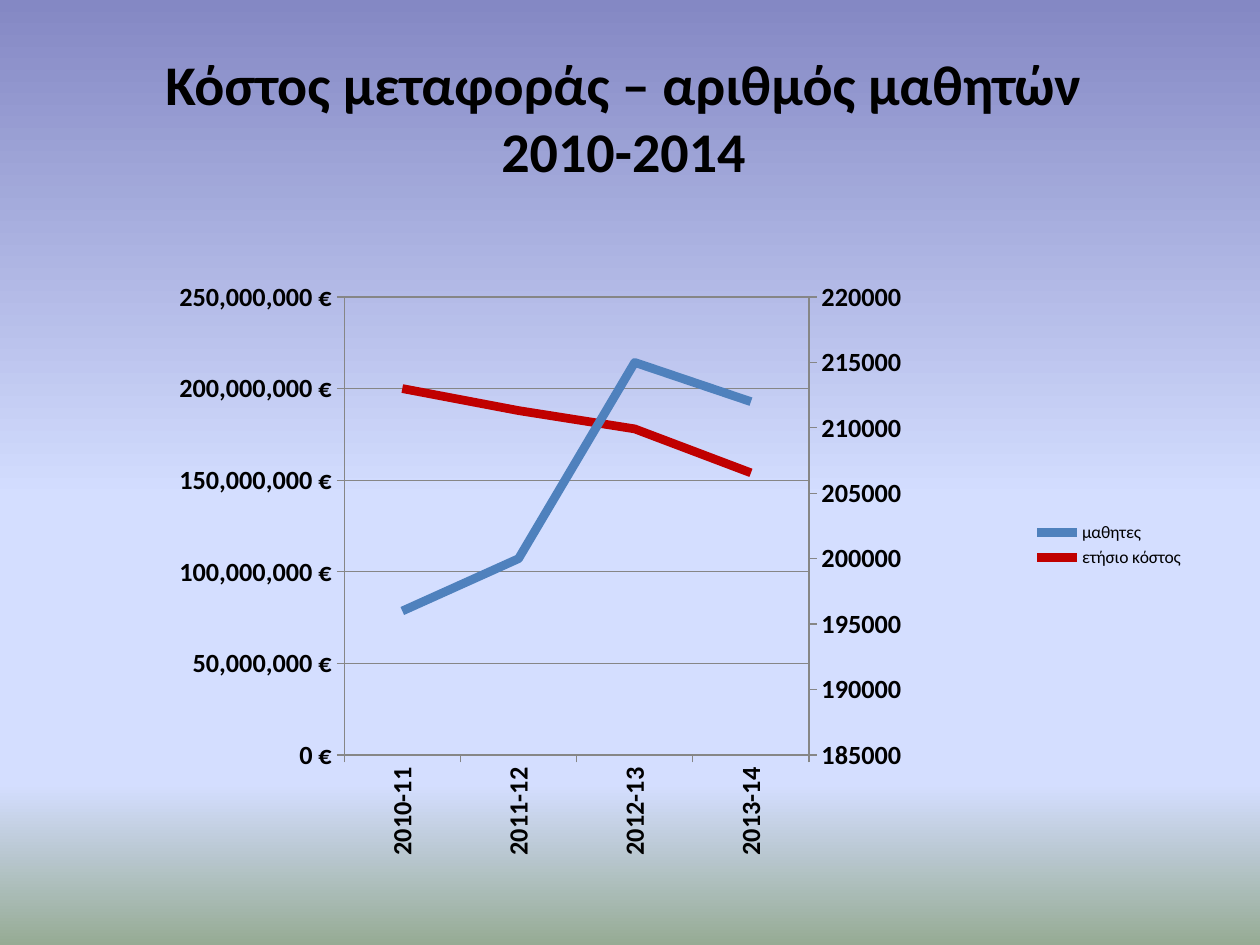
import copy
from lxml import etree
from pptx import Presentation, util as u
from pptx.chart.data import CategoryChartData
from pptx.dml.color import RGBColor
from pptx.enum import chart as ch, text
from pptx.oxml import parse_xml
from pptx.oxml.ns import qn

TITLE = ["Κόστος μεταφοράς – αριθμός μαθητών ", "2010-2014 "]
YEARS = ["2010-11", "2011-12", "2012-13", "2013-14"]
COST = ("ετήσιο κόστος", [200000000, 188000000, 178000000, 154000000])
PUPILS = ("μαθητες", [196000, 200000, 215000, 212000])
PLOT = {"x": 0.248, "y": 0.118, "w": 0.41, "h": 0.706}
THEME = {
    "font": "Calibri", "text": "000000", "grid": "868686",
    "cost": "C00000", "pupils": "4F81BD",
    "title": 32, "axis": 15, "legend": 10, "line": 5, "hair": 0.75,
    "background": [(0, "8488C4"), (53, "D4DEFF"), (83, "D4DEFF"), (100, "96AB94")],
}
NS = ('xmlns:a="http://schemas.openxmlformats.org/drawingml/2006/main" '
      'xmlns:p="http://schemas.openxmlformats.org/presentationml/2006/main" '
      'xmlns:c="http://schemas.openxmlformats.org/drawingml/2006/chart"')


def rgb(name):
    return RGBColor.from_string(THEME[name])


def style_font(font, size, bold):
    font.name, font.size, font.bold = THEME["font"], u.Pt(THEME[size]), bold
    font.color.rgb = rgb("text")


def style_line(line, color, width):
    line.color.rgb, line.width = rgb(color), u.Pt(THEME[width])


def set_background(s):
    stops = "".join(f'<a:gs pos="{pos * 1000}"><a:srgbClr val="{color}"/></a:gs>'
                    for pos, color in THEME["background"])
    s.element.cSld.insert(0, parse_xml(
        f'<p:bg {NS}><p:bgPr><a:gradFill rotWithShape="1"><a:gsLst>{stops}</a:gsLst>'
        '<a:lin ang="5400000" scaled="0"/></a:gradFill><a:effectLst/></p:bgPr></p:bg>'))


def add_title(s):
    sp = s.shapes.title
    sp.left, sp.top, sp.width, sp.height = map(u.Inches, (0.5, 0.3, 9, 1.25))
    tf = sp.text_frame
    tf.word_wrap = True
    tf.vertical_anchor = text.MSO_ANCHOR.MIDDLE
    p = tf.paragraphs[0]
    p.alignment = text.PP_ALIGN.CENTER
    for i, line in enumerate(TITLE):
        if i:
            p.add_line_break()
        r = p.add_run()
        r.text = line
        style_font(r.font, "title", True)


def style_axis(axis):
    axis.major_tick_mark = ch.XL_TICK_MARK.OUTSIDE
    axis.minor_tick_mark = ch.XL_TICK_MARK.NONE
    style_font(axis.tick_labels.font, "axis", True)
    style_line(axis.format.line, "grid", "hair")


def set_plot_area(plot_area):
    old = plot_area.find(qn("c:layout"))
    if old is not None:
        plot_area.remove(old)
    parts = "".join(f'<c:{k} val="{v}"/>' for k, v in PLOT.items())
    plot_area.insert(0, parse_xml(
        f'<c:layout {NS}><c:manualLayout><c:layoutTarget val="inner"/>'
        f'<c:xMode val="edge"/><c:yMode val="edge"/>{parts}</c:manualLayout></c:layout>'))


def add_right_axis(plot_area):
    left = plot_area.find(qn("c:lineChart"))
    right = copy.deepcopy(left)
    left.remove(left.findall(qn("c:ser"))[1])
    right.remove(right.find(qn("c:ser")))
    left.addnext(right)
    for ref, num in zip(right.findall(qn("c:axId")), ("5001", "5002")):
        ref.set("val", num)
    cat = copy.deepcopy(plot_area.find(qn("c:catAx")))
    val = copy.deepcopy(plot_area.find(qn("c:valAx")))
    for axis, own, other in ((cat, "5001", "5002"), (val, "5002", "5001")):
        axis.find(qn("c:axId")).set("val", own)
        axis.find(qn("c:crossAx")).set("val", other)
    cat.find(qn("c:delete")).set("val", "1")
    val.find(qn("c:axPos")).set("val", "r")
    val.find(qn("c:crosses")).set("val", "max")
    val.find(qn("c:numFmt")).set("formatCode", "General")
    val.remove(val.find(qn("c:majorGridlines")))
    scaling = val.find(qn("c:scaling"))
    for tag in ("max", "min"):
        scaling.remove(scaling.find(qn(f"c:{tag}")))
    for tag, limit in (("max", 220000), ("min", 185000)):
        etree.SubElement(scaling, qn(f"c:{tag}")).set("val", str(limit))
    val.find(qn("c:majorUnit")).set("val", "5000")
    plot_area.findall(qn("c:valAx"))[-1].addnext(val)
    val.addnext(cat)


def add_cost_chart(s):
    data = CategoryChartData()
    data.categories = YEARS
    for name, values in (COST, PUPILS):
        data.add_series(name, values)
    chart = s.shapes.add_chart(ch.XL_CHART_TYPE.LINE_STACKED,
                               *map(u.Inches, (0.5, 1.75, 9, 5.15)), data).chart
    chart.has_title = False
    style_font(chart.font, "legend", False)
    chart.has_legend = True
    chart.legend.position = ch.XL_LEGEND_POSITION.RIGHT
    chart.legend.include_in_layout = False
    style_font(chart.legend.font, "legend", False)
    chart.plots[0].vary_by_categories = False
    for ser, color in zip(chart.plots[0].series, ("cost", "pupils")):
        ser.smooth = False
        ser.marker.style = ch.XL_MARKER_STYLE.NONE
        style_line(ser.format.line, color, "line")
    cat, val = chart.category_axis, chart.value_axis
    style_axis(cat)
    style_axis(val)
    cat.format.line.width = u.Pt(THEME["hair"])
    cat._element.find(qn("c:txPr")).find(qn("a:bodyPr")).set("rot", "-5400000")
    val.minimum_scale, val.maximum_scale, val.major_unit = 0, 250000000, 50000000
    val.tick_labels.number_format = '#,##0\\ "€"'
    val.tick_labels.number_format_is_linked = False
    val.has_major_gridlines = True
    style_line(val.major_gridlines.format.line, "grid", "hair")
    plot_area = chart._chartSpace.chart.plotArea
    set_plot_area(plot_area)
    add_right_axis(plot_area)


def main():
    prs = Presentation()
    prs.slide_width, prs.slide_height = u.Inches(10), u.Inches(7.5)
    s = prs.slides.add_slide(prs.slide_layouts[5])
    set_background(s)
    add_title(s)
    add_cost_chart(s)
    prs.save("out.pptx")


if __name__ == "__main__":
    main()
